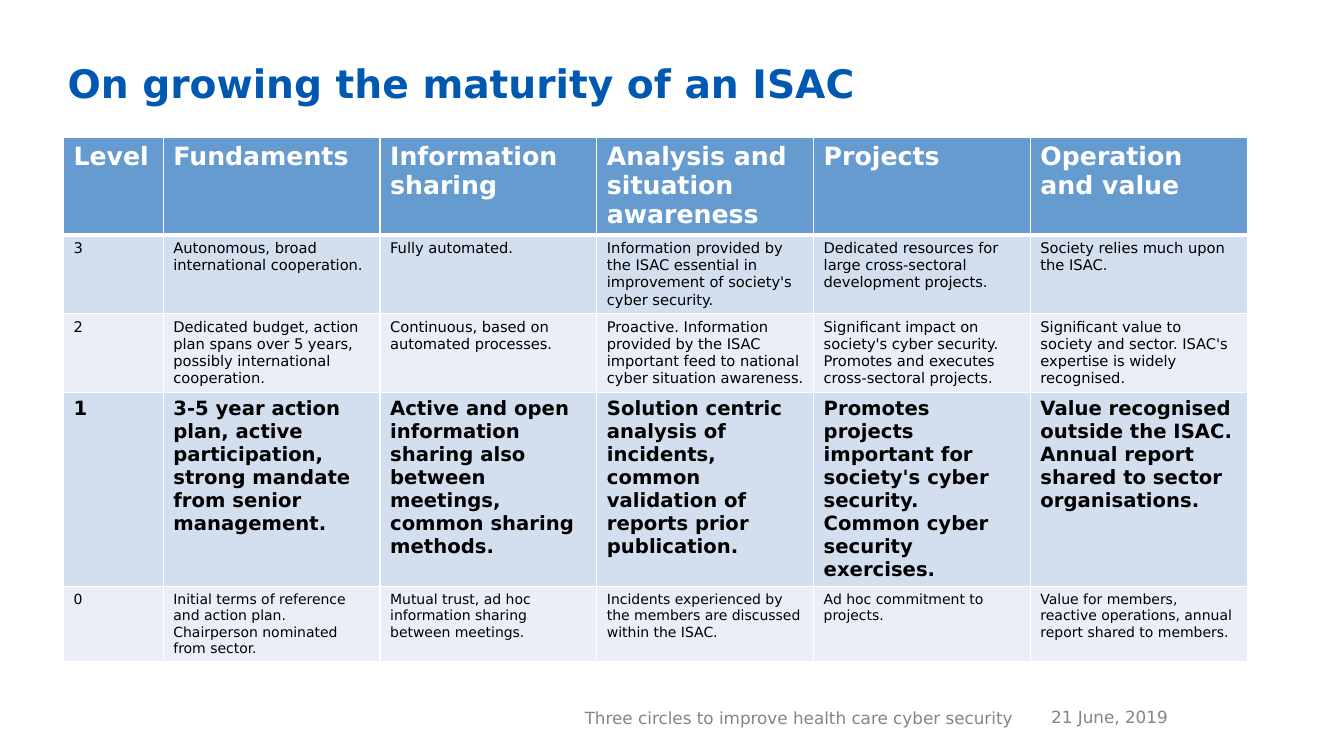
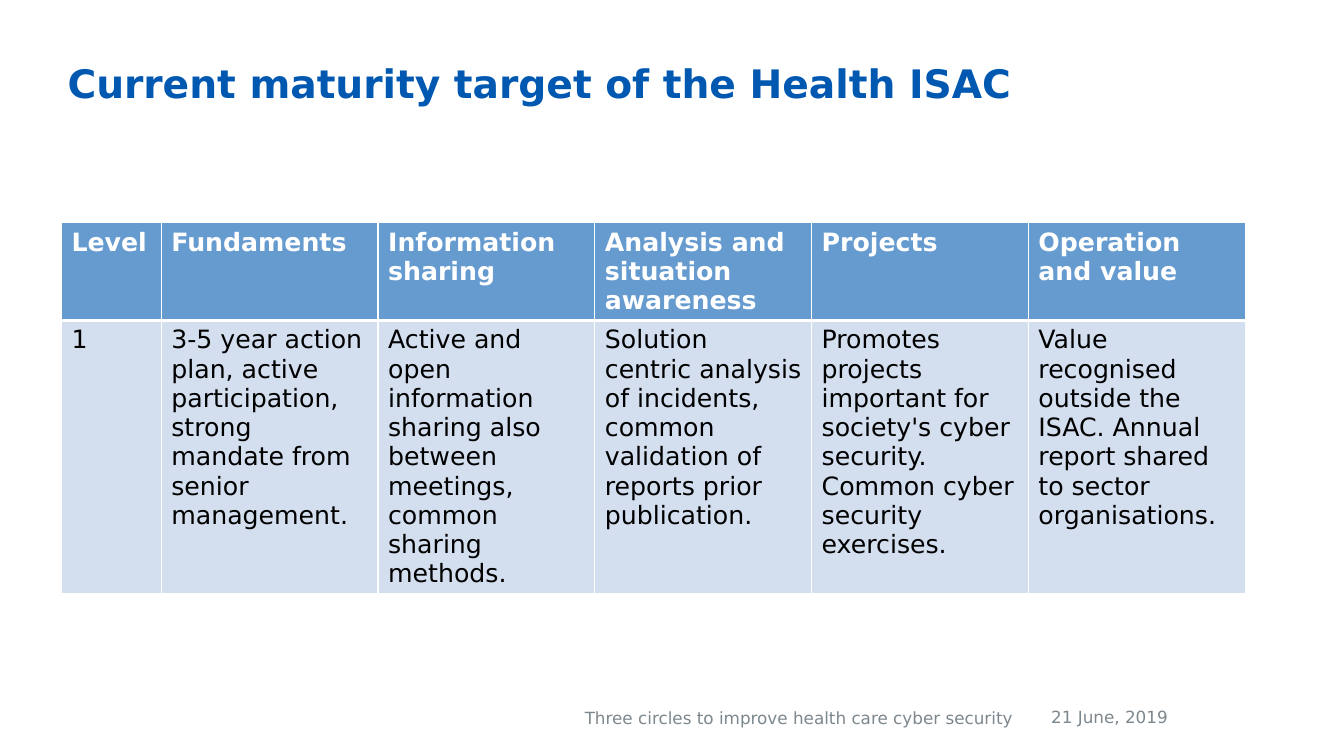
from lxml import etree
from pptx import Presentation
from pptx import util as u
from pptx.dml.color import RGBColor
from pptx.enum import text as t
from pptx.oxml import ns

# Shared style
PX = 9144  # EMU per px, 100 px to the inch
FONT = "DejaVu Sans"
HUES = {"title": "0058B1", "head": "669BD0", "odd": "D3DEEE", "even": "EAEFF7",
        "white": "FFFFFF", "black": "000000", "grey": "7C878E"}
COLS = [99] + [215] * 5
ROW = 41  # least row height, rows grow with their text

# Table content
HEAD = ["Level", "Fundaments", "Information sharing",
        "Analysis and situation awareness", "Projects", "Operation and value"]
LEVELS = {
    3: ["Autonomous, broad international cooperation.",
        "Fully automated.",
        "Information provided by the ISAC essential in improvement of society's cyber security.",
        "Dedicated resources for large cross-sectoral development projects.",
        "Society relies much upon the ISAC."],
    2: ["Dedicated budget, action plan spans over 5 years, possibly international cooperation.",
        "Continuous, based on automated processes.",
        "Proactive. Information provided by the ISAC important feed to national cyber "
        "situation awareness.",
        "Significant impact on society's cyber security. Promotes and executes "
        "cross-sectoral projects.",
        "Significant value to society and sector. ISAC's expertise is widely recognised."],
    1: ["3-5 year action plan, active participation, strong mandate from senior management.",
        "Active and open information sharing also between meetings, common sharing methods.",
        "Solution centric analysis of incidents, common validation of reports prior publication.",
        "Promotes projects important for society's cyber security. Common cyber security "
        "exercises.",
        "Value recognised outside the ISAC. Annual report shared to sector organisations."],
    0: ["Initial terms of reference and action plan. Chairperson nominated from sector.",
        "Mutual trust, ad hoc information sharing between meetings.",
        "Incidents experienced by the members are discussed within the ISAC.",
        "Ad hoc commitment to projects.",
        "Value for members, reactive operations, annual report shared to members."],
}


def px(*sizes):
    return [u.Emu(n * PX) for n in sizes]


def write(frame, words, size, hue, bold=False, align=t.PP_ALIGN.LEFT, space=None):
    frame.word_wrap = True
    para = frame.paragraphs[0]
    para.alignment = align
    para.line_spacing = space
    run = para.add_run()
    run.text = words
    font = run.font
    font.name, font.size, font.bold = FONT, u.Pt(size), bold
    font.color.rgb = RGBColor.from_string(HUES[hue])


def trim(frame, anchor):
    frame.margin_left = frame.margin_top = frame.margin_right = frame.margin_bottom = 0
    frame.auto_size = t.MSO_AUTO_SIZE.NONE
    frame.vertical_anchor = anchor


def label(slide, box, words, **form):
    frame = slide.shapes.add_textbox(*px(*box)).text_frame
    trim(frame, t.MSO_ANCHOR.MIDDLE)
    write(frame, words, 12, "grey", **form)


def edge(cell, base):
    """White cell borders, with the bottom one base points wide."""
    props = cell._tc.get_or_add_tcPr()
    for spot, (side, width) in enumerate(zip("LRTB", (1, 1, 1, base))):
        line = etree.Element(ns.qn("a:ln" + side), w=str(u.Pt(width)))
        fill = etree.SubElement(line, ns.qn("a:solidFill"))
        etree.SubElement(fill, ns.qn("a:srgbClr"), val=HUES["white"])
        props.insert(spot, line)


def grid(slide, left, top, rows):
    """Each row is a (texts, size, bold) tuple; the header row comes first."""
    box = px(left, top, sum(COLS), ROW * len(rows))
    table = slide.shapes.add_table(len(rows), len(COLS), *box).table
    for col, width in zip(table.columns, px(*COLS)):
        col.width = width
    for r, (texts, size, bold) in enumerate(rows):
        back = ("odd" if r % 2 else "even") if r else "head"
        for c, words in enumerate(texts):
            cell = table.cell(r, c)
            cell.fill.solid()
            cell.fill.fore_color.rgb = RGBColor.from_string(HUES[back])
            edge(cell, 1 if r else 3)
            write(cell.text_frame, words, size, "black" if r else "white", bold)


def level(num, size, bold=False):
    return [str(num)] + LEVELS[num], size, bold


def page(deck, name):
    """Slide with title and footer."""
    slide = deck.slides.add_slide(deck.slide_layouts[5])
    title = slide.shapes.title
    title.left, title.top, title.width, title.height = px(67, 64, 1175, 121)
    trim(title.text_frame, t.MSO_ANCHOR.TOP)
    write(title.text_frame, name, 28, "title", bold=True, space=0.9)
    label(slide, (1023, 698, 155, 27), "21 June, 2019", align=t.PP_ALIGN.CENTER)
    label(slide, (580, 699, 443, 26), "Three circles to improve health care cyber security")
    return slide


def main():
    deck = Presentation()
    deck.slide_width, deck.slide_height = px(1333, 750)
    head = (HEAD, 18, True)

    # All levels, with level 1 stressed
    slide = page(deck, "On growing the maturity of an ISAC")
    grid(slide, 63, 136, [head, level(3, 10.5), level(2, 10.5),
                          level(1, 14, True), level(0, 10)])

    # Target level only
    slide = page(deck, "Current maturity target of the Health ISAC")
    grid(slide, 61, 221, [head, level(1, 18)])

    deck.save("out.pptx")


if __name__ == "__main__":
    main()
